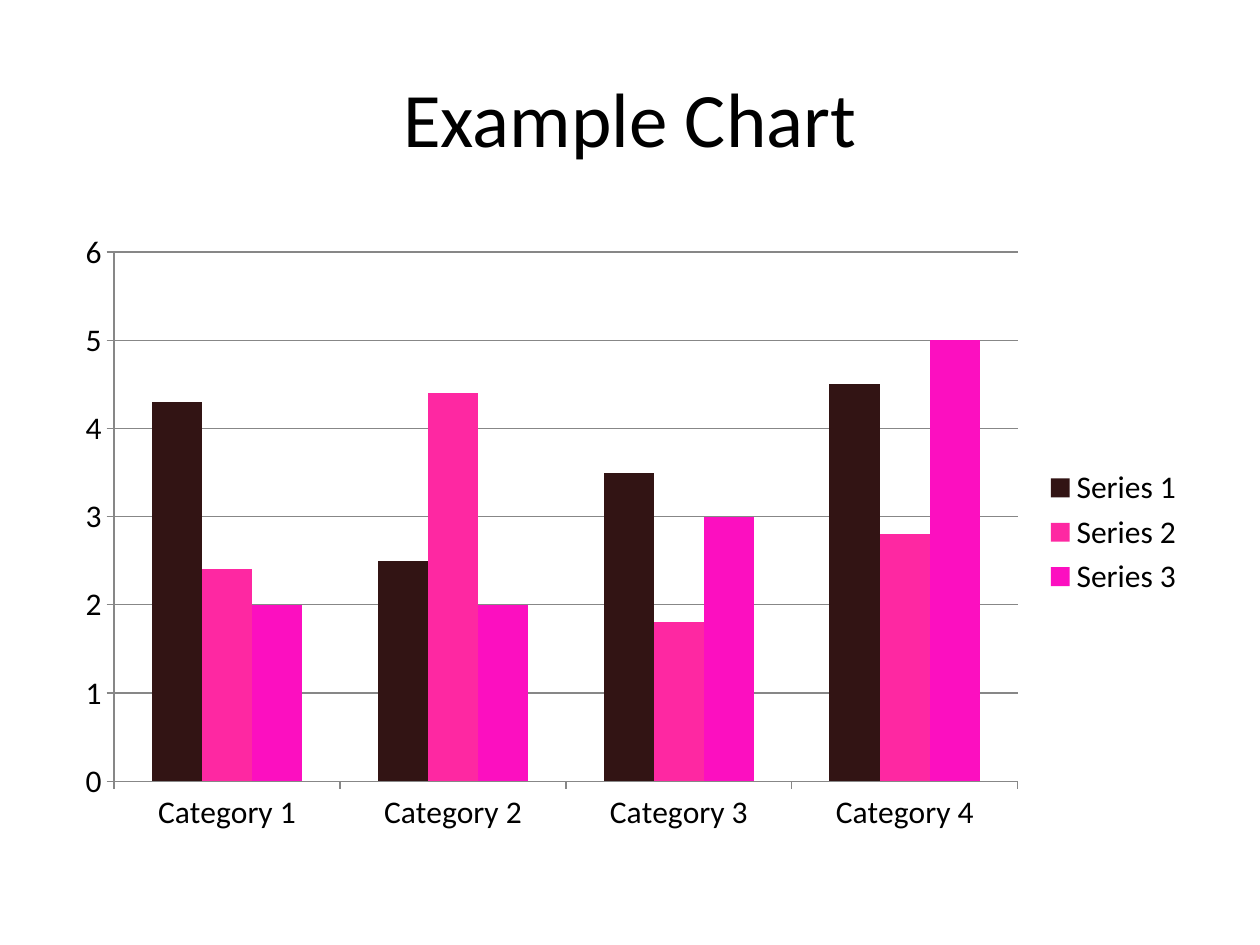
from pptx import Presentation
from pptx.chart.data import CategoryChartData
from pptx.dml.color import RGBColor
from pptx.enum.chart import XL_CHART_TYPE, XL_LEGEND_POSITION, XL_TICK_MARK
from pptx.enum.text import MSO_ANCHOR, PP_ALIGN
from pptx.util import Emu, Pt

EMU_PER_PX = 9144
BLACK = RGBColor(0x00, 0x00, 0x00)
WHITE = RGBColor(0xFF, 0xFF, 0xFF)
GREY = RGBColor(0x87, 0x87, 0x87)
SEAL_BROWN = RGBColor(0x32, 0x14, 0x14)
ROSE = RGBColor(0xFE, 0x28, 0xA2)
SHOCKING_PINK = RGBColor(0xFC, 0x0F, 0xC0)

CATEGORIES = [f"Category {number}" for number in range(1, 5)]
SERIES = [
    ("Series 1", (4.3, 2.5, 3.5, 4.5), SEAL_BROWN),
    ("Series 2", (2.4, 4.4, 1.8, 2.8), ROSE),
    ("Series 3", (2, 2, 3, 5), SHOCKING_PINK),
]


def px(*lengths):
    return [Emu(length * EMU_PER_PX) for length in lengths]


class SlideBuilder:
    font_name = "Calibri"
    title_size = Pt(44)
    chart_size = Pt(18)

    def __init__(self, deck):
        self.slide = deck.slides.add_slide(deck.slide_layouts[5])
        fill = self.slide.background.fill
        fill.solid()
        fill.fore_color.rgb = WHITE

    def style(self, font, size):
        font.name = self.font_name
        font.size = size
        font.color.rgb = BLACK

    def title(self, text, *bounds):
        box = self.slide.shapes.title
        box.left, box.top, box.width, box.height = px(*bounds)
        frame = box.text_frame
        frame.word_wrap = True
        frame.vertical_anchor = MSO_ANCHOR.MIDDLE
        para = frame.paragraphs[0]
        para.alignment = PP_ALIGN.CENTER
        span = para.add_run()
        span.text = text
        self.style(span.font, self.title_size)

    def column_chart(self, categories, series, *bounds):
        data = CategoryChartData()
        data.categories = categories
        for name, values, _ in series:
            data.add_series(name, values)
        chart = self.slide.shapes.add_chart(
            XL_CHART_TYPE.COLUMN_CLUSTERED, *px(*bounds), data
        ).chart
        self.style(chart.font, self.chart_size)
        chart.has_title = False
        chart.has_legend = True
        chart.legend.position = XL_LEGEND_POSITION.RIGHT
        chart.legend.include_in_layout = False

        plot = chart.plots[0]
        plot.gap_width = 150
        plot.overlap = 0
        plot.vary_by_categories = False
        for bars, (_, _, color) in zip(plot.series, series):
            bars.format.fill.solid()
            bars.format.fill.fore_color.rgb = color

        value_axis = chart.value_axis
        value_axis.minimum_scale = 0
        value_axis.maximum_scale = 6
        value_axis.major_unit = 1
        value_axis.has_major_gridlines = True
        for axis in (chart.category_axis, value_axis):
            axis.major_tick_mark = XL_TICK_MARK.OUTSIDE
            axis.minor_tick_mark = XL_TICK_MARK.NONE
        for part in (chart.category_axis, value_axis, value_axis.major_gridlines):
            part.format.line.color.rgb = GREY
            part.format.line.width = Pt(0.75)


def main():
    deck = Presentation()
    deck.slide_width, deck.slide_height = px(1000, 750)
    page = SlideBuilder(deck)
    page.title("Example Chart", 50, 30, 900, 125)
    page.column_chart(CATEGORIES, SERIES, 50, 175, 900, 495)
    deck.save("out.pptx")


if __name__ == "__main__":
    main()
